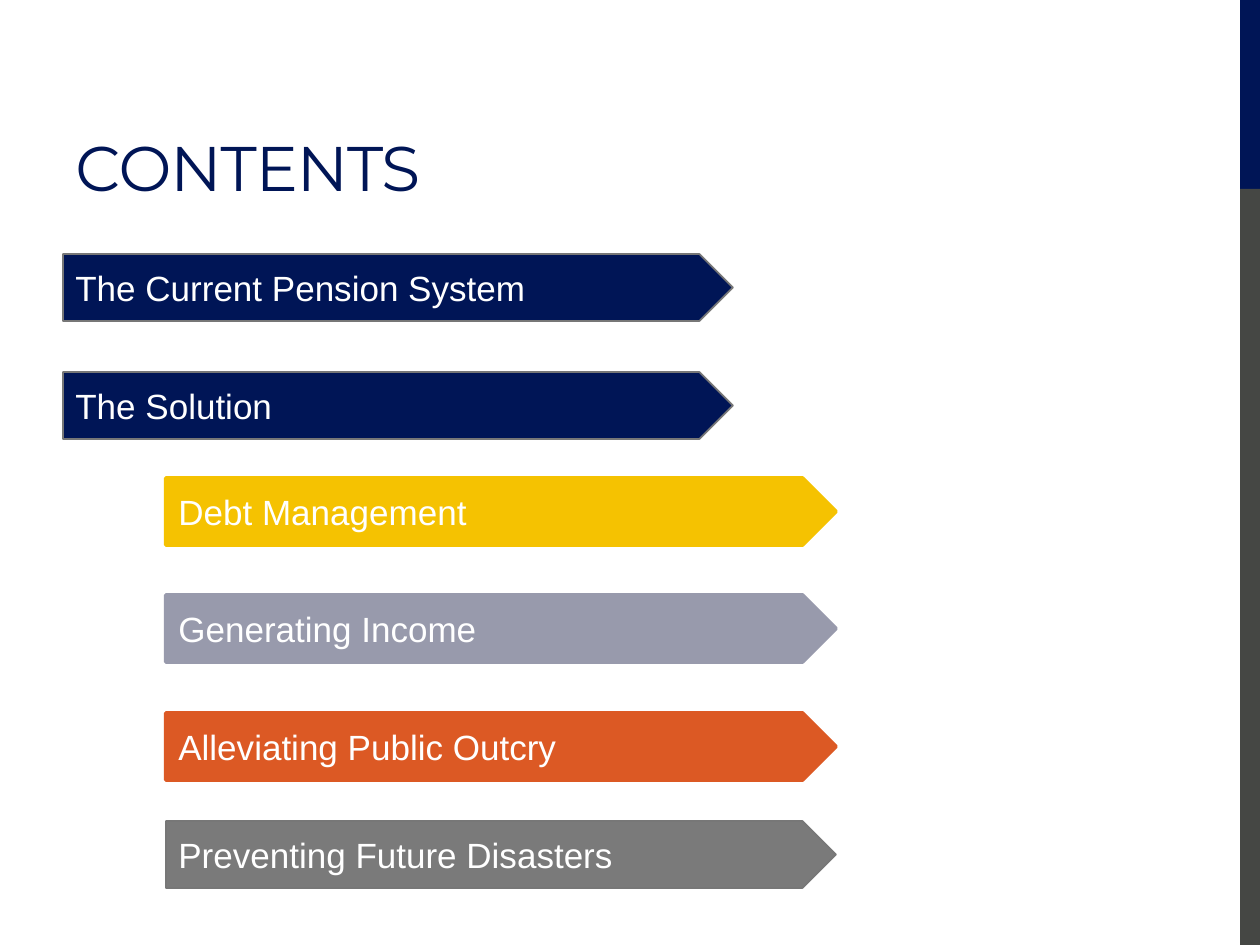
"""Build a contents slide with pentagon-arrow agenda bars."""
from dataclasses import dataclass

from pptx import Presentation
from pptx.dml.color import RGBColor
from pptx.enum.shapes import MSO_SHAPE
from pptx.enum.text import MSO_ANCHOR, PP_ALIGN
from pptx.util import Emu, Pt

RECTANGLE, PENTAGON = MSO_SHAPE.RECTANGLE, MSO_SHAPE.PENTAGON
MIDDLE, BOTTOM = MSO_ANCHOR.MIDDLE, MSO_ANCHOR.BOTTOM
LEFT = PP_ALIGN.LEFT
EMU_PER_PX = 914400 / 126


@dataclass(frozen=True)
class Theme:
    navy: str = "001556"
    charcoal: str = "454744"
    yellow: str = "F5C201"
    lavender: str = "989AAC"
    orange: str = "DC5924"
    gray: str = "7A7A7A"
    outline: str = "777777"
    white: str = "FFFFFF"
    title_font: str = "Montserrat"
    body_font: str = "Arial"
    title_size: int = 36
    body_size: int = 20


theme = Theme()


def px(*lengths):
    return [Emu(round(length * EMU_PER_PX)) for length in lengths]


def write(shape, text, font, size, color, anchor):
    frame = shape.text_frame
    frame.word_wrap = True
    frame.vertical_anchor = anchor
    frame.text = text
    para = frame.paragraphs[0]
    para.alignment = LEFT
    span = para.runs[0]
    span.font.name = font
    span.font.size = Pt(size)
    span.font.color.rgb = RGBColor.from_string(color)
    return span


deck = Presentation()
deck.slide_width, deck.slide_height = px(1260, 945)
page = deck.slides.add_slide(deck.slide_layouts[6])

for top, height, color in [(0, 189, theme.navy), (189, 756, theme.charcoal)]:
    stripe = page.shapes.add_shape(RECTANGLE, *px(1240, top, 20, height))
    stripe.shadow.inherit = False
    stripe.fill.solid()
    stripe.fill.fore_color.rgb = RGBColor.from_string(color)
    stripe.line.fill.background()

title = page.shapes.add_textbox(*px(63, 21, 798, 189))
title_span = write(title, "CONTENTS", theme.title_font, theme.title_size, theme.navy, BOTTOM)
title_span.font._element.set("spc", "-60")

topic_left, subtopic_left = 63, 166
bars = [
    ("The Current Pension System", topic_left, 254, theme.navy, theme.outline, 1),
    ("The Solution", topic_left, 372, theme.navy, theme.outline, 1),
    ("Debt Management", subtopic_left, 478, theme.yellow, theme.yellow, 2.25),
    ("Generating Income", subtopic_left, 595, theme.lavender, theme.lavender, 2.25),
    ("Alleviating Public Outcry", subtopic_left, 713, theme.orange, theme.orange, 2.25),
    ("Preventing Future Disasters", subtopic_left, 821, theme.gray, theme.outline, 1),
]
for label, left, top, fill, outline, weight in bars:
    bar = page.shapes.add_shape(PENTAGON, *px(left, top, 670, 67))
    bar.shadow.inherit = False
    bar.fill.solid()
    bar.fill.fore_color.rgb = RGBColor.from_string(fill)
    bar.line.color.rgb = RGBColor.from_string(outline)
    bar.line.width = Pt(weight)
    write(bar, label, theme.body_font, theme.body_size, theme.white, MIDDLE)

deck.save("out.pptx")
